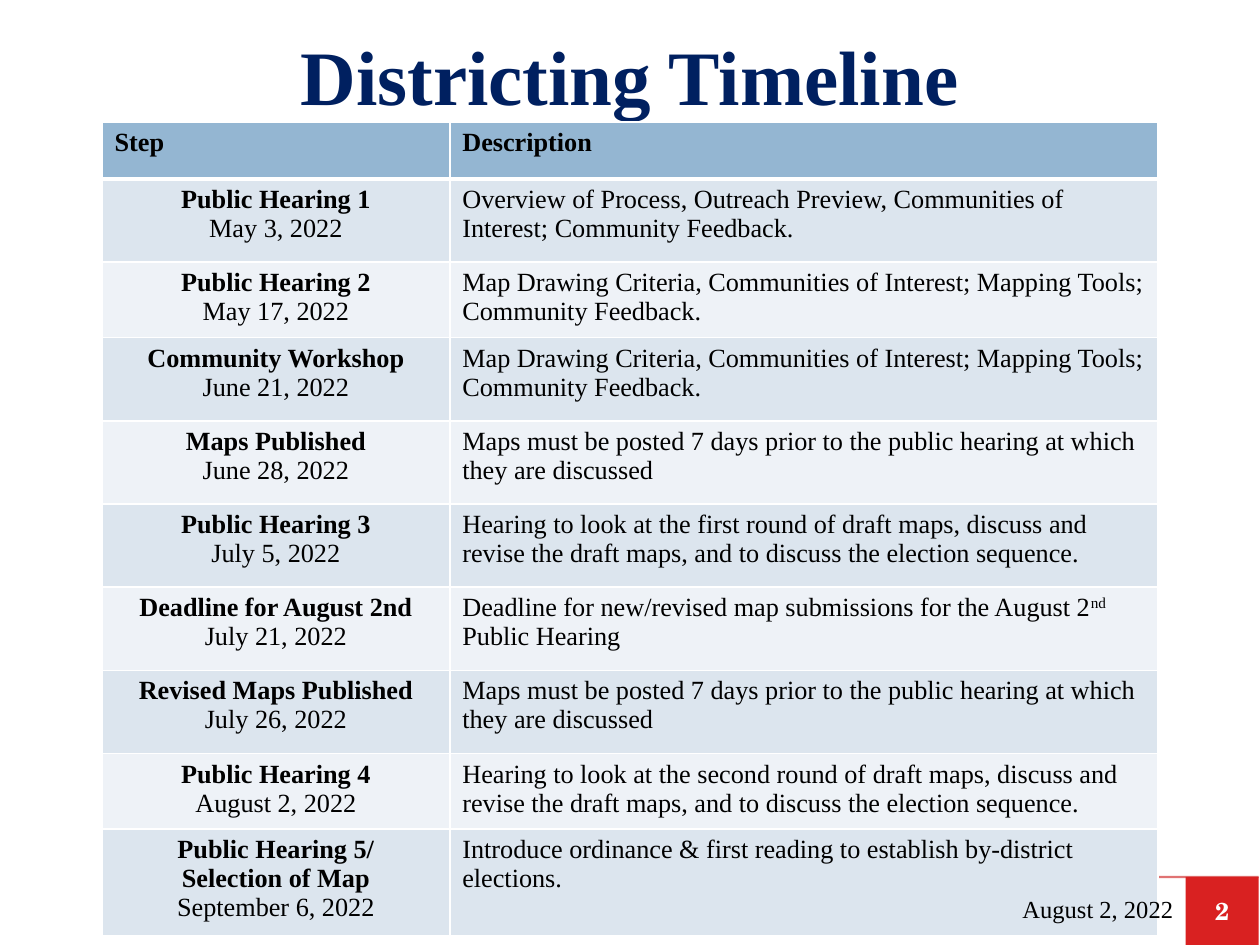
import pptx
import pptx.dml.color
import pptx.enum.shapes
import pptx.enum.text
import pptx.oxml
import pptx.oxml.ns
import pptx.util
from lxml import etree

PX = 9144  # 100 px to the inch
SERIF = "Times New Roman"
ALIGN = pptx.enum.text.PP_ALIGN
MIDDLE = pptx.enum.text.MSO_ANCHOR.MIDDLE
qn = pptx.oxml.ns.qn

NAVY, RED, DARK_RED = "002060", "D92121", "C80000"
BLACK, WHITE = "000000", "FFFFFF"
HEADER, BANDS = "94B6D2", ("DCE5EE", "EEF2F7")

POSTING = "Maps must be posted 7 days prior to the public hearing at which they are discussed"
CRITERIA = "Map Drawing Criteria, Communities of Interest; Mapping Tools; Community Feedback."
DRAFTS = ("Hearing to look at the {} round of draft maps, discuss and revise the draft maps, "
          "and to discuss the election sequence.")

# Title lines, date, description, row height; ^ encloses superscript
STEPS = [
    (["Public Hearing 1"], "May 3, 2022",
     "Overview of Process, Outreach Preview, Communities of Interest; Community Feedback.", 66),
    (["Public Hearing 2"], "May 17, 2022", CRITERIA, 47),
    (["Community Workshop"], "June 21, 2022", CRITERIA, 66),
    (["Maps Published"], "June 28, 2022", POSTING, 66),
    (["Public Hearing 3"], "July 5, 2022", DRAFTS.format("first"), 66),
    (["Deadline for August 2nd"], "July 21, 2022",
     "Deadline for new/revised map submissions for the August 2^nd^ Public Hearing", 66),
    (["Revised Maps Published"], "July 26, 2022", POSTING, 66),
    (["Public Hearing 4"], "August 2, 2022", DRAFTS.format("second"), 47),
    (["Public Hearing 5/", "Selection of Map"], "September 6, 2022",
     "Introduce ordinance & first reading to establish by-district elections.", 47),
]


def px(n):
    return pptx.util.Emu(n * PX)


def rgb(value):
    return pptx.dml.color.RGBColor.from_string(value)


class Deck:
    text_style = {"name": SERIF, "size": pptx.util.Pt(15), "bold": False}

    def __init__(self, width, height):
        self.prs = pptx.Presentation()
        self.prs.slide_width, self.prs.slide_height = px(width), px(height)
        self.s = self.prs.slides.add_slide(self.prs.slide_layouts[6])

    def paragraph(self, p, text, color=BLACK, align=ALIGN.LEFT, **style):
        p.alignment = align
        for i, part in enumerate(text.split("^")):
            r = p.add_run()
            r.text = part
            for key, value in {**self.text_style, **style}.items():
                setattr(r.font, key, value)
            r.font.color.rgb = rgb(color)
            if i % 2:
                r._r.get_or_add_rPr().set("baseline", "30000")

    def fill_frame(self, sp, text, **style):
        tf = sp.text_frame
        tf.word_wrap = True
        tf.vertical_anchor = MIDDLE
        self.paragraph(tf.paragraphs[0], text, **style)

    def text(self, box, text, **style):
        self.fill_frame(self.s.shapes.add_textbox(*map(px, box)), text, **style)

    def rect(self, box, fill, text, **style):
        sp = self.s.shapes.add_shape(pptx.enum.shapes.MSO_SHAPE.RECTANGLE, *map(px, box))
        sp.shadow.inherit = False
        sp.fill.solid()
        sp.fill.fore_color.rgb = rgb(fill)
        sp.line.fill.background()
        self.fill_frame(sp, text, **style)

    def line(self, ends, color, width, opacity):
        sp = self.s.shapes.add_connector(pptx.enum.shapes.MSO_CONNECTOR.STRAIGHT, *map(px, ends))
        sp.line.width = pptx.util.Pt(width)
        sp.line.color.rgb = rgb(color)
        clr = sp._element.spPr.find(".//" + qn("a:srgbClr"))
        etree.SubElement(clr, qn("a:alpha"), val=str(opacity * 1000))
        etree.SubElement(sp._element.spPr, qn("a:effectLst"))

    def table(self, left, top, cols, rows):
        box = (left, top, sum(cols), sum(rows))
        table = self.s.shapes.add_table(len(rows), len(cols), *map(px, box)).table
        table.first_row = table.horz_banding = False
        for col, width in zip(table.columns, cols):
            col.width = px(width)
        for row, height in zip(table.rows, rows):
            row.height = px(height)
        return table

    def cell(self, cell, fill, lines, top=1, bottom=1):
        """Each line is a pair of text and style."""
        tcPr = cell._tc.get_or_add_tcPr()
        for side, width in {"L": 1, "R": 1, "T": top, "B": bottom}.items():
            ln = etree.SubElement(tcPr, qn("a:ln" + side), w=str(pptx.util.Pt(width)))
            solid = etree.SubElement(ln, qn("a:solidFill"))
            etree.SubElement(solid, qn("a:srgbClr"), val=WHITE)
        cell.fill.solid()
        cell.fill.fore_color.rgb = rgb(fill)
        tf = cell.text_frame
        for i, (text, style) in enumerate(lines):
            p = tf.add_paragraph() if i else tf.paragraphs[0]
            self.paragraph(p, text, **style)


def main():
    deck = Deck(1000, 750)

    # Page number corner
    deck.line((142, 696, 999, 696), DARK_RED, 1.25, 55)
    deck.rect((941, 696, 58, 54), RED, "2", name="TeX Gyre Schola", size=pptx.util.Pt(14),
              bold=True, color=WHITE, align=ALIGN.CENTER)

    # Title
    deck.text((0, 9, 1000, 100), "Districting Timeline", size=pptx.util.Pt(44),
              bold=True, color=NAVY, align=ALIGN.CENTER)

    # Timeline table
    table = deck.table(81, 97, (276, 562), [45] + [step[-1] for step in STEPS])
    for col, heading in enumerate(("Step", "Description")):
        deck.cell(table.cell(0, col), HEADER, [(heading, {"bold": True})], bottom=3)
    for row, (titles, date, description, _) in enumerate(STEPS, 1):
        fill = BANDS[(row - 1) % 2]
        top = 3 if row == 1 else 1
        lines = [(title, {"bold": True, "align": ALIGN.CENTER}) for title in titles]
        lines.append((date, {"align": ALIGN.CENTER}))
        deck.cell(table.cell(row, 0), fill, lines, top)
        deck.cell(table.cell(row, 1), fill, [(description, {})], top)

    # Footer date
    deck.text((649, 701, 292, 40), "August 2, 2022", size=pptx.util.Pt(14), align=ALIGN.RIGHT)

    deck.prs.save("out.pptx")


if __name__ == "__main__":
    main()
